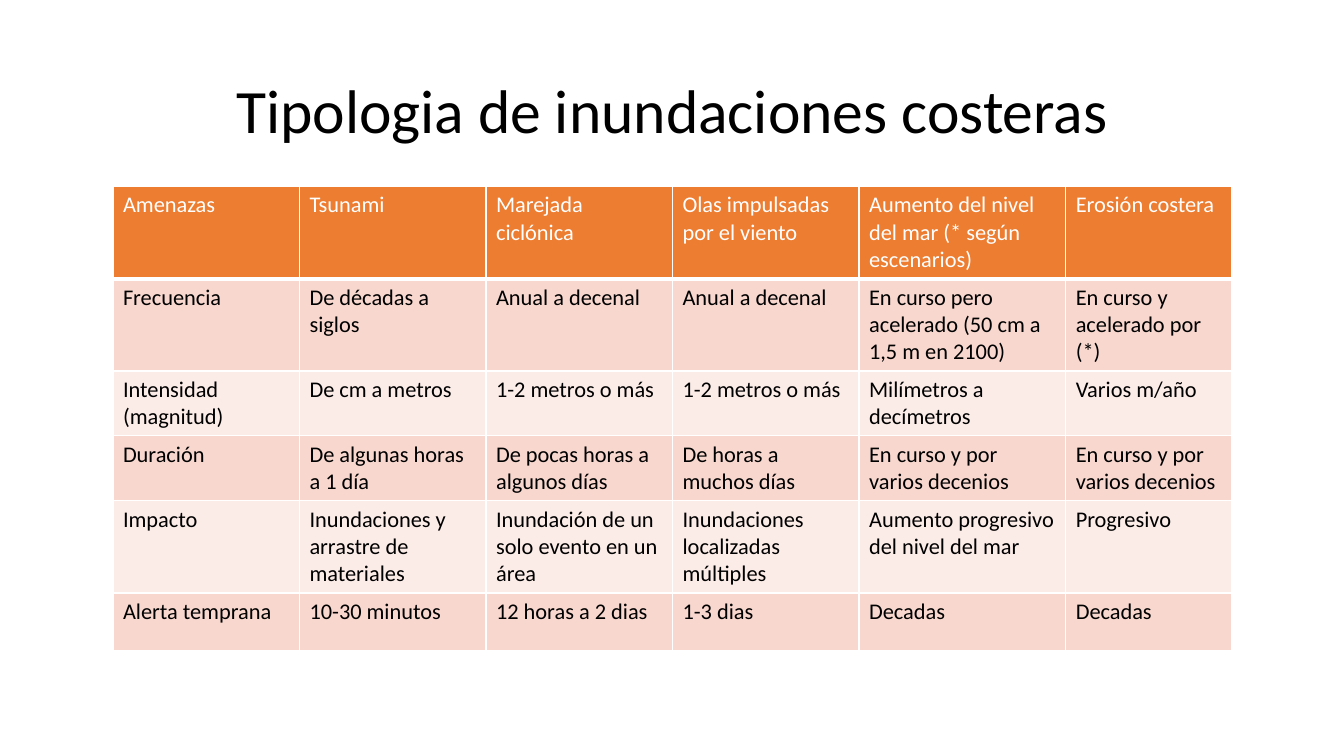
from lxml import etree
from pptx import Presentation
from pptx.dml.color import RGBColor
from pptx.enum.text import MSO_ANCHOR, PP_ALIGN
from pptx.oxml.ns import qn
from pptx.util import Inches, Pt

CENTER = PP_ALIGN.CENTER
MIDDLE = MSO_ANCHOR.MIDDLE

COLORS = {
    "black": "000000",
    "white": "FFFFFF",
    "head": "ED7D31",
    "odd": "F8D7CE",
    "even": "FCECE8",
}
TITLE = {"name": "Calibri", "size": Pt(44), "bold": False}
BODY = {"name": "Calibri", "size": Pt(16), "bold": False}

WIDTHS = [1.85, 1.85, 1.85, 1.85, 2.05, 1.65]
HEIGHTS = [0.57, 0.57, 0.57, 0.57, 0.8, 0.57]
HAZARDS = [
    ["Amenazas", "Tsunami", "Marejada ciclónica",
     "Olas impulsadas por el viento",
     "Aumento del nivel del mar (* según escenarios)", "Erosión costera"],
    ["Frecuencia", "De décadas a siglos", "Anual a decenal",
     "Anual a decenal",
     "En curso pero acelerado (50 cm a 1,5 m en 2100)",
     "En curso y acelerado por (*)"],
    ["Intensidad (magnitud)", "De cm a metros", "1-2 metros o más",
     "1-2 metros o más", "Milímetros a decímetros", "Varios m/año"],
    ["Duración", "De algunas horas a 1 día",
     "De pocas horas a algunos días", "De horas a muchos días",
     "En curso y por varios decenios", "En curso y por varios decenios"],
    ["Impacto", "Inundaciones y arrastre de materiales",
     "Inundación de un solo evento en un área",
     "Inundaciones localizadas múltiples",
     "Aumento progresivo del nivel del mar", "Progresivo"],
    ["Alerta temprana", "10-30 minutos", "12 horas a 2 dias", "1-3 dias",
     "Decadas", "Decadas"],
]


def paint(name):
    return RGBColor.from_string(COLORS[name])


def style(font, form, color):
    for key, value in form.items():
        setattr(font, key, value)
    font.color.rgb = paint(color)


def add_title(slide, text):
    title = slide.shapes.title
    title.left, title.top = Inches(0.92), Inches(0.4)
    title.width, title.height = Inches(11.5), Inches(1.45)
    frame = title.text_frame
    frame.text = text
    frame.vertical_anchor = MIDDLE
    par = frame.paragraphs[0]
    par.alignment = CENTER
    par.line_spacing = 0.9
    style(par.runs[0].font, TITLE, "black")


def set_border(cell, bottom):
    """Draw white cell edges, 1 pt wide save for the bottom one."""
    props = cell._tc.get_or_add_tcPr()
    for side, width in {"L": 1, "R": 1, "T": 1, "B": bottom}.items():
        line = etree.SubElement(props, qn(f"a:ln{side}"), w=str(Pt(width)))
        fill = etree.SubElement(line, qn("a:solidFill"))
        etree.SubElement(fill, qn("a:srgbClr"), val=COLORS["white"])


def fill_cell(cell, text, row):
    head = row == 0
    set_border(cell, 3 if head else 1)
    cell.fill.solid()
    cell.fill.fore_color.rgb = paint(
        "head" if head else "odd" if row % 2 else "even")
    cell.text = text
    font = cell.text_frame.paragraphs[0].runs[0].font
    style(font, BODY, "white" if head else "black")


def add_grid(slide, data):
    shape = slide.shapes.add_table(
        len(data), len(data[0]), Inches(1.12), Inches(1.85),
        Inches(sum(WIDTHS)), Inches(sum(HEIGHTS)))
    table = shape.table
    for col, width in zip(table.columns, WIDTHS):
        col.width = Inches(width)
    for row, height in zip(table.rows, HEIGHTS):
        row.height = Inches(height)
    for r, texts in enumerate(data):
        for c, text in enumerate(texts):
            fill_cell(table.cell(r, c), text, r)
    shape.height = Inches(4.53)


def main():
    deck = Presentation()
    deck.slide_width, deck.slide_height = Inches(13.33), Inches(7.5)
    slide = deck.slides.add_slide(deck.slide_layouts[5])
    add_title(slide, "Tipologia de inundaciones costeras")
    add_grid(slide, HAZARDS)
    deck.save("out.pptx")


if __name__ == "__main__":
    main()
